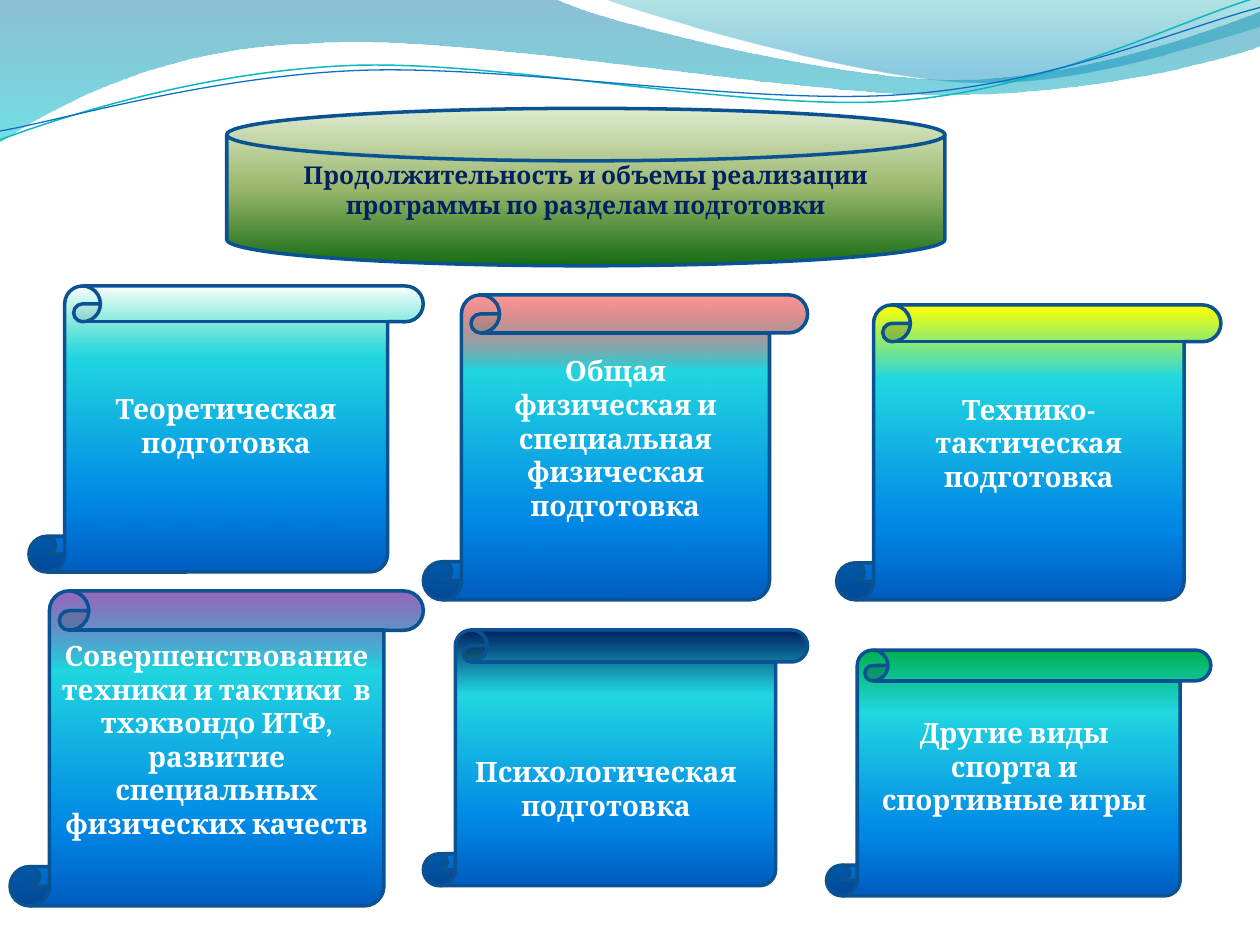
from math import cos, radians, sin

from pptx import Presentation
from pptx.dml.color import RGBColor as RGB
from pptx.enum.shapes import MSO_SHAPE as Kind
from pptx.enum.text import MSO_ANCHOR as Anchor, MSO_AUTO_SIZE as Fit, PP_ALIGN as Align
from pptx.oxml import parse_xml
from pptx.oxml.ns import nsdecls
from pptx.util import Inches, Pt

TAIL = [(25, "21D6E0"), (75, "0087E6"), (100, "005CBF")]

WAVES = [
    ([(0, 0), (4.4, -0.01), (4.76, 0.17, 6.64, 0.63, 7.58, 0.63),
      (8.53, 0.63, 9.58, 0.26, 10, 0.09), (10.01, 0.36),
      (9.83, 0.44, 8.7, 0.76, 7.46, 0.75), (6.22, 0.75, 3.82, 0.28, 2.57, 0.34),
      (1.29, 0.36, 0.46, 0.83, -0.01, 1.13), (0, 0)],
     [(0, "0074A1", 45), (100, "00C6CF", 55)]),
    ([(4.79, -0.01), (5.09, 0.11, 6.82, 0.62, 7.69, 0.65),
      (8.56, 0.69, 9.61, 0.32, 10, 0.21), (10, 0), (4.79, -0.01)],
     [(0, "00A1A9", 30), (80, "008BBF", 45)]),
]

LINES = [
    ([(0, 1.11), (0.48, 0.93, 1.58, 0.57, 2.77, 0.52),
      (3.95, 0.47, 5.93, 0.89, 7.13, 0.8), (8.33, 0.71, 9.38, 0.15, 9.98, -0.02)],
     (4.99, 0.57), "0AB8BF", 0.85),
    ([(0, 1.04), (0.47, 0.96, 1.64, 0.61, 2.83, 0.56),
      (4.03, 0.51, 5.97, 0.84, 7.17, 0.75), (8.36, 0.67, 9.41, 0.21, 10, 0.06)],
     (5, 0.59), "0F6FC6", 0.75),
]

SCROLLS = [
    ((0.23, 2.27, 3.13, 2.27), (0, "03D4A8", 0), "Теоретическая подготовка", 12),
    ((6.56, 5.16, 3.05, 1.95), (0, "00B050"), "", 0),
    ((3.36, 5, 3.05, 2.03), (0, "002060"), "", 0),
    ((0.08, 4.69, 3.28, 2.5), (0, "7030A0", 72),
     "Совершенствование техники и тактики  в тхэквондо ИТФ, "
     "развитие специальных физических качеств", 18),
    ((3.36, 2.34, 3.05, 2.42), (0, "FF0000", 40),
     "Общая физическая и специальная физическая подготовка", 18),
    ((6.64, 2.42, 3.05, 2.34), (0, "FFFF00"), "Технико-тактическая подготовка", 18),
]

NOTES = [
    ((3.52, 5.94, 2.58, 0.91), "Психологическая подготовка"),
    ((6.88, 5.63, 2.34, 1.21), "Другие виды спорта и спортивные игры"),
]


def hue(code):
    return RGB.from_string(code)


def pairs(part):
    return list(zip(part[::2], part[1::2]))


def turn(part, mid, angle):
    c, s = cos(radians(angle)), sin(radians(angle))
    spun = []
    for x, y in pairs(part):
        dx, dy = x - mid[0], y - mid[1]
        spun += [mid[0] + dx * c - dy * s, mid[1] + dx * s + dy * c]
    return spun


def bend(shape, parts):
    steps = iter(shape._element.findall(".//{*}lnTo"))
    for part in parts:
        first = next(steps)
        if len(part) == 6:
            arc = parse_xml(f'<a:cubicBezTo {nsdecls("a")}/>')
            first.addprevious(arc)
            for step in (first, next(steps), next(steps)):
                arc.append(step[0])
                step.getparent().remove(step)


def blend(shape, stops):
    marks = ""
    for pos, code, *clear in stops:
        alpha = f'<a:alpha val="{clear[0] * 1000}"/>' if clear else ""
        marks += (f'<a:gs pos="{pos * 1000}"><a:srgbClr val="{code}">'
                  f'{alpha}</a:srgbClr></a:gs>')
    shape.fill.gradient()
    old = shape._element.spPr.find(".//{*}gradFill")
    old.getparent().replace(old, parse_xml(
        f'<a:gradFill {nsdecls("a")} rotWithShape="1"><a:gsLst>{marks}</a:gsLst>'
        '<a:lin ang="5400000" scaled="0"/></a:gradFill>'))


def write(frame, text, size=16, color="FFFFFF", font="Cambria", lift=0, anchor=Anchor.MIDDLE):
    frame.word_wrap = True
    frame.vertical_anchor = anchor
    frame.margin_bottom = Inches(0.05) + Pt(lift * 1.2)
    par = frame.paragraphs[0]
    par.alignment = Align.CENTER
    run = par.add_run()
    run.text = text
    run.font.name, run.font.size, run.font.bold = font, Pt(size), True
    run.font.color.rgb = hue(color)


class Deck:
    """Holds the outline style and the current slide, and draws each kind of element."""

    edge, width, tilt = "0B5292", 2, -2.7

    def __init__(self, file):
        self.slide = file.slides.add_slide(file.slide_layouts[6])
        self.shapes = self.slide.shapes

    def draw(self, parts, close):
        dots = [(Inches(x), Inches(y)) for part in parts for x, y in pairs(part)]
        pen = self.shapes.build_freeform(*dots[0], scale=1.0)
        pen.add_line_segments(dots[1:], close=close)
        shape = pen.convert_to_shape()
        bend(shape, parts[1:])
        shape.shadow.inherit = False
        return shape

    def wave(self, parts, stops):
        shape = self.draw(parts, True)
        blend(shape, stops)
        shape.line.fill.background()

    def curve(self, parts, mid, color, width):
        shape = self.draw([turn(part, mid, -self.tilt) for part in parts], False)
        shape.rotation = self.tilt
        shape.fill.background()
        shape.line.color.rgb = hue(color)
        shape.line.width = Pt(width)

    def block(self, kind, box, stops, text="", **form):
        shape = self.shapes.add_shape(kind, *map(Inches, box))
        shape.shadow.inherit = False
        blend(shape, stops)
        shape.line.color.rgb = hue(self.edge)
        shape.line.width = Pt(self.width)
        if text:
            write(shape.text_frame, text, **form)

    def note(self, box, text):
        frame = self.shapes.add_textbox(*map(Inches, box)).text_frame
        write(frame, text, anchor=Anchor.TOP)
        frame.auto_size = Fit.SHAPE_TO_FIT_TEXT


def main():
    file = Presentation()
    file.slide_width, file.slide_height = Inches(10), Inches(7.5)
    deck = Deck(file)
    for wave in WAVES:
        deck.wave(*wave)
    for line in LINES:
        deck.curve(*line)
    deck.block(Kind.FLOWCHART_MAGNETIC_DISK, (1.8, 0.86, 5.7, 1.25),
               [(0, "DDEBCF"), (50, "9CB86E"), (100, "156B13")],
               "Продолжительность и объемы реализации программы по разделам подготовки",
               size=14, color="002060", lift=10)
    for box, top, text, lift in SCROLLS:
        deck.block(Kind.VERTICAL_SCROLL, box, [top] + TAIL, text, lift=lift)
    for note in NOTES:
        deck.note(*note)
    file.save("out.pptx")


if __name__ == "__main__":
    main()
